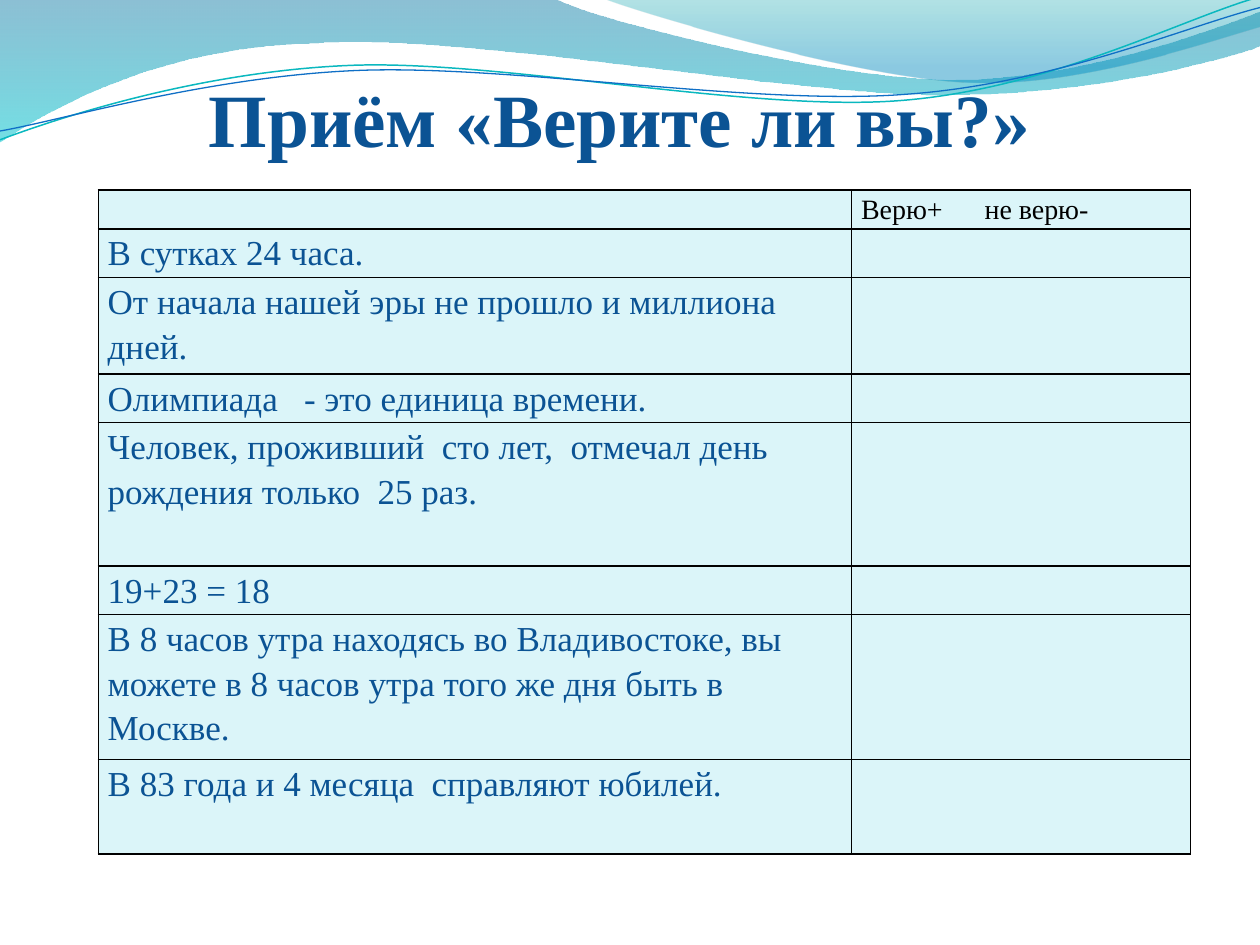
"""Build the slide «Верите ли вы?»: a waved header above a true-or-false table."""
from dataclasses import dataclass

from lxml.etree import SubElement
from pptx import Presentation
from pptx.dml.color import RGBColor
from pptx.enum.text import MSO_ANCHOR
from pptx.oxml.ns import qn
from pptx.util import Inches, Pt

COLUMNS, ROWS = 100, 75
UNIT = Inches(10) // COLUMNS
FACE = "Times New Roman"
NAVY, BLACK, PALE = "0B5394", "000000", "DBF5F9"

Point = tuple[float, float]
Curve = tuple[Point, Point, Point]


@dataclass(frozen=True)
class Tint:
    """A gradient stop: colour, place and opacity, both as shares."""
    color: str
    place: float
    opacity: float


@dataclass(frozen=True)
class Outline:
    """Straight points and Bezier curves, in grid units."""
    start: Point
    pieces: tuple[Point | Curve, ...]


@dataclass(frozen=True)
class Wave:
    """A filled band of the header."""
    outline: Outline
    tints: tuple[Tint, Tint]


@dataclass(frozen=True)
class Ripple:
    """A thin line that runs along the header."""
    outline: Outline
    color: str
    weight: float


@dataclass(frozen=True)
class Statement:
    """A table row: its height in grid units and the text of its cells."""
    height: float
    claim: str = ""
    answer: str = ""


WAVES = (
    Wave(Outline((0, 0), (
        (44, -0.1),
        ((47.6, 1.7), (66.4, 6.3), (75.8, 6.3)),
        ((85.3, 6.3), (95.8, 2.6), (100, 0.9)),
        (100.1, 3.6),
        ((98.3, 4.4), (87, 7.6), (74.6, 7.5)),
        ((62.2, 7.5), (38.2, 2.8), (25.7, 3.4)),
        ((12.9, 3.6), (4.6, 8.3), (-0.1, 11.3)))),
        (Tint("0074A1", 0, 0.45), Tint("00C6CF", 1, 0.55))),
    Wave(Outline((47.9, -0.1), (
        ((50.9, 1.1), (68.2, 6.2), (76.9, 6.5)),
        ((85.6, 6.9), (96.1, 3.2), (100, 2.1)),
        (100, 0))),
        (Tint("00A1A9", 0, 0.3), Tint("008BBF", 0.8, 0.45))),
)
RIPPLES = (
    Ripple(Outline((0, 11.1), (
        ((4.8, 9.3), (15.8, 5.7), (27.7, 5.2)),
        ((39.5, 4.7), (59.3, 8.9), (71.3, 8)),
        ((83.3, 7.1), (93.8, 1.5), (99.8, -0.2)))), "0AB8BF", 0.85),
    Ripple(Outline((0, 10.4), (
        ((4.7, 9.6), (16.4, 6.1), (28.3, 5.6)),
        ((40.3, 5.1), (59.7, 8.4), (71.7, 7.5)),
        ((83.6, 6.7), (94.1, 2.1), (100, 0.6)))), "0F6FC6", 0.75),
)
TABLE_WIDTHS = (59.8, 26.9)
ANSWER_TAB = 9.8
STATEMENTS = (
    Statement(2.9, answer="Верю+\tне верю-"),
    Statement(3.6, "В сутках 24 часа."),
    Statement(7.5, "От начала нашей эры не прошло и миллиона дней."),
    Statement(3.6, "Олимпиада   - это единица времени."),
    Statement(11.4, "Человек, проживший  сто лет,  отмечал день рождения только  25 раз."),
    Statement(3.6, "19+23 = 18"),
    Statement(11.4, "В 8 часов утра находясь во Владивостоке, вы можете "
                    "в 8 часов утра того же дня быть в Москве."),
    Statement(7.5, "В 83 года и 4 месяца  справляют юбилей."),
)


def grid(cells: float) -> int:
    """Turn grid units into a length."""
    return round(cells * UNIT)


def rgb(color: str) -> RGBColor:
    """Turn a hex string into a colour."""
    return RGBColor.from_string(color)


def set_font(paragraph, size: float, color: str, bold: bool = False) -> None:
    """Give a paragraph, its runs and its end mark one font."""
    for font in (paragraph.font, *(run.font for run in paragraph.runs)):
        font.name, font.size, font.bold = FACE, Pt(size), bold
        font.color.rgb = rgb(color)
    end_mark = SubElement(paragraph._p, qn("a:endParaRPr"), sz=str(round(size * 100)))
    SubElement(end_mark, qn("a:latin"), typeface=FACE)


def trace(slide, outline: Outline, closed: bool):
    """Draw an outline as a freeform with true curves and no shadow."""
    is_curve = [isinstance(piece[0], tuple) for piece in outline.pieces]
    ends = [piece[-1] if curved else piece for piece, curved in zip(outline.pieces, is_curve)]
    builder = slide.shapes.build_freeform(*map(grid, outline.start))
    builder.add_line_segments([(grid(x), grid(y)) for x, y in ends], close=closed)
    freeform = builder.convert_to_shape()
    freeform.shadow.inherit = False
    segments = list(freeform.element.spPr.iter(qn("a:lnTo")))
    for segment, piece, curved in zip(segments, outline.pieces, is_curve):
        if curved:
            segment.tag = qn("a:cubicBezTo")
            segment.remove(segment[0])
            for x, y in piece:
                SubElement(segment, qn("a:pt"), x=str(grid(x) - freeform.left),
                           y=str(grid(y) - freeform.top))
    return freeform


def draw_wave(slide, wave: Wave) -> None:
    """Draw a band with a translucent gradient from top to bottom."""
    band = trace(slide, wave.outline, closed=True)
    band.line.fill.background()
    band.fill.gradient()
    band.fill.gradient_angle = 270
    for stop, tint in zip(band.fill.gradient_stops, wave.tints):
        stop.position = tint.place
        stop.color.rgb = rgb(tint.color)
    for swatch, tint in zip(band.element.spPr.iter(qn("a:srgbClr")), wave.tints):
        SubElement(swatch, qn("a:alpha"), val=str(round(tint.opacity * 100000)))


def draw_ripple(slide, ripple: Ripple) -> None:
    """Draw a thin open curve."""
    thread = trace(slide, ripple.outline, closed=False)
    thread.fill.background()
    thread.line.color.rgb = rgb(ripple.color)
    thread.line.width = Pt(ripple.weight)


def draw_title(slide, wording: str) -> None:
    """Write the heading."""
    heading = slide.shapes.add_textbox(grid(15.6), grid(3.1), grid(82), grid(12.5)).text_frame
    heading.word_wrap = True
    heading.vertical_anchor = MSO_ANCHOR.MIDDLE
    heading.text = wording
    set_font(heading.paragraphs[0], 43, NAVY, bold=True)


def fill_cell(cell, wording: str, size: float, color: str) -> None:
    """Write a bordered, tinted table cell."""
    cell.margin_left = cell.margin_right = grid(0.75)
    cell.margin_top = cell.margin_bottom = 0
    cell.text = wording
    paragraph = cell.text_frame.paragraphs[0]
    paragraph.line_spacing = 1.15
    if "\t" in wording:
        tabs = SubElement(paragraph._p.get_or_add_pPr(), qn("a:tabLst"))
        SubElement(tabs, qn("a:tab"), pos=str(grid(ANSWER_TAB)), algn="l")
    set_font(paragraph, size if wording else 12, color)
    properties = cell._tc.get_or_add_tcPr()
    for side in ("a:lnL", "a:lnR", "a:lnT", "a:lnB"):
        border = SubElement(properties, qn(side), w=str(Pt(1)))
        SubElement(SubElement(border, qn("a:solidFill")), qn("a:srgbClr"), val=BLACK)
    cell.fill.solid()
    cell.fill.fore_color.rgb = rgb(PALE)


def draw_table(slide, statements: tuple[Statement, ...]) -> None:
    """Lay out the claims with an empty column for answers."""
    height = sum(statement.height for statement in statements)
    table = slide.shapes.add_table(len(statements), len(TABLE_WIDTHS), grid(7.8), grid(15.1),
                                   grid(sum(TABLE_WIDTHS)), grid(height)).table
    table.first_row = table.horz_banding = False
    for column, width in zip(table.columns, TABLE_WIDTHS):
        column.width = grid(width)
    for row, statement in zip(table.rows, statements):
        row.height = grid(statement.height)
        claim, answer = row.cells
        fill_cell(claim, statement.claim, 20, NAVY)
        fill_cell(answer, statement.answer, 16, BLACK)


def main() -> None:
    """Assemble and save the slide."""
    deck = Presentation()
    deck.slide_width, deck.slide_height = grid(COLUMNS), grid(ROWS)
    slide = deck.slides.add_slide(deck.slide_layouts[6])
    for wave in WAVES:
        draw_wave(slide, wave)
    for ripple in RIPPLES:
        draw_ripple(slide, ripple)
    draw_title(slide, "Приём «Верите ли вы?»")
    draw_table(slide, STATEMENTS)
    deck.save("out.pptx")


if __name__ == "__main__":
    main()
